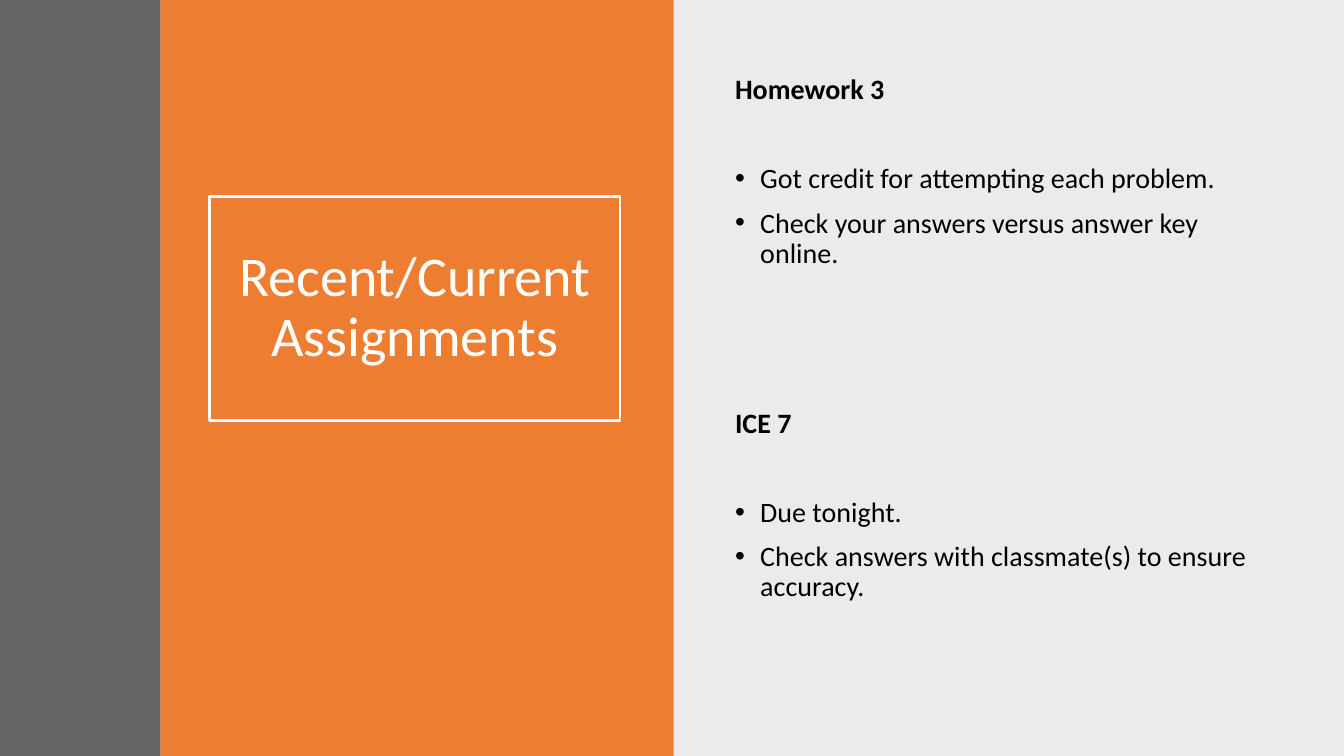
from lxml import etree
from pptx import Presentation
from pptx.dml.color import RGBColor
from pptx.enum.shapes import MSO_SHAPE
from pptx.enum.text import MSO_ANCHOR, MSO_AUTO_SIZE, PP_ALIGN
from pptx.oxml.ns import qn
from pptx.util import Pt

PX = 9144
SLIDE_WIDTH, SLIDE_HEIGHT = 1333, 750
TWO_CONTENT_LAYOUT = 3
RECTANGLE = MSO_SHAPE.RECTANGLE
MIDDLE, TOP = MSO_ANCHOR.MIDDLE, MSO_ANCHOR.TOP
CENTER, LEFT = PP_ALIGN.CENTER, PP_ALIGN.LEFT
NO_AUTOFIT = MSO_AUTO_SIZE.NONE
FONT = "Calibri"
BULLET_INDENT = 25
COLORS = {"black": "000000", "white": "FFFFFF", "orange": "ED7D31", "gray": "404040"}

ASSIGNMENTS = [
    ("Homework 3", ["Got credit for attempting each problem.",
                    "Check your answers versus answer key online."]),
    ("ICE 7", ["Due tonight.",
               "Check answers with classmate(s) to ensure accuracy."]),
]


def color(name):
    """Return the named colour."""
    return RGBColor.from_string(COLORS[name])


def place(shape, box):
    """Move and size a shape to a box in px."""
    shape.left, shape.top, shape.width, shape.height = [length * PX for length in box]


def write(paragraph, text, size=20, color_name="black", bold=False,
          align=LEFT, before=10, bullet=False):
    """Write one formatted paragraph."""
    paragraph.alignment = align
    paragraph.line_spacing = 0.9
    paragraph.space_before = Pt(before)
    run = paragraph.add_run()
    run.text = text
    run.font.name = FONT
    run.font.size = Pt(size)
    run.font.bold = bold
    run.font.color.rgb = color(color_name)
    properties = paragraph.runs[0].font and paragraph._p.get_or_add_pPr()
    indent = BULLET_INDENT * PX if bullet else 0
    properties.set("marL", str(indent))
    properties.set("indent", str(-indent))
    if bullet:
        etree.SubElement(properties, qn("a:buFont")).set("typeface", "Arial")
        etree.SubElement(properties, qn("a:buChar")).set("char", "•")
    else:
        etree.SubElement(properties, qn("a:buNone"))


def prepare_frame(shape, anchor):
    """Clear fitting from a placeholder and return its text frame."""
    frame = shape.text_frame
    frame.word_wrap = True
    frame.auto_size = NO_AUTOFIT
    frame.vertical_anchor = anchor
    return frame


def add_panel(slide, box, color_name, opacity=100):
    """Add a plain panel behind the title."""
    left, top, width, height = [length * PX for length in box]
    panel = slide.shapes.add_shape(RECTANGLE, left, top, width, height)
    panel.shadow.inherit = False
    panel.line.fill.background()
    panel.fill.solid()
    panel.fill.fore_color.rgb = color(color_name)
    if opacity < 100:
        fill_color = panel.element.spPr.find(f"{qn('a:solidFill')}/{qn('a:srgbClr')}")
        etree.SubElement(fill_color, qn("a:alpha")).set("val", str(opacity * 1000))
    slide.shapes.title.element.addprevious(panel.element)


def build_background(slide, box):
    """Divide the box into the three panels."""
    left, top, width, height = box
    stripe, half = 159, 667
    add_panel(slide, (left + half, top, width - half, height), "black", 8)
    add_panel(slide, (left + stripe, top, half + 1 - stripe, height), "orange")
    add_panel(slide, (left, top, stripe, height), "gray", 80)


def build_title(slide, box):
    """Write the outlined title in the box."""
    title = slide.shapes.title
    place(title, box)
    title.line.color.rgb = color("white")
    title.line.width = Pt(2)
    frame = prepare_frame(title, MIDDLE)
    write(frame.paragraphs[0], "Recent/Current Assignments", size=40,
          color_name="white", align=CENTER, before=0)


def build_assignment(body, box, heading, notes):
    """Write a heading and its bulleted notes in the box."""
    place(body, box)
    frame = prepare_frame(body, TOP)
    write(frame.paragraphs[0], heading, bold=True)
    for index, note in enumerate(notes):
        write(frame.add_paragraph(), note, bullet=True, before=10 if index else 42)


def build_assignments(slide, box):
    """Stack the assignments in the box."""
    left, top, width, height = box
    body_height = 279
    step = (height - body_height) // (len(ASSIGNMENTS) - 1)
    bodies = list(slide.placeholders)[1:]
    for index, (body, (heading, notes)) in enumerate(zip(bodies, ASSIGNMENTS)):
        build_assignment(body, (left, top + index * step, width, body_height), heading, notes)


def main():
    """Build and save the presentation."""
    presentation = Presentation()
    presentation.slide_width = SLIDE_WIDTH * PX
    presentation.slide_height = SLIDE_HEIGHT * PX
    slide = presentation.slides.add_slide(presentation.slide_layouts[TWO_CONTENT_LAYOUT])
    build_background(slide, (0, 0, SLIDE_WIDTH, SLIDE_HEIGHT))
    build_title(slide, (208, 195, 407, 222))
    build_assignments(slide, (719, 70, 553, 610))
    presentation.save("out.pptx")


if __name__ == "__main__":
    main()
